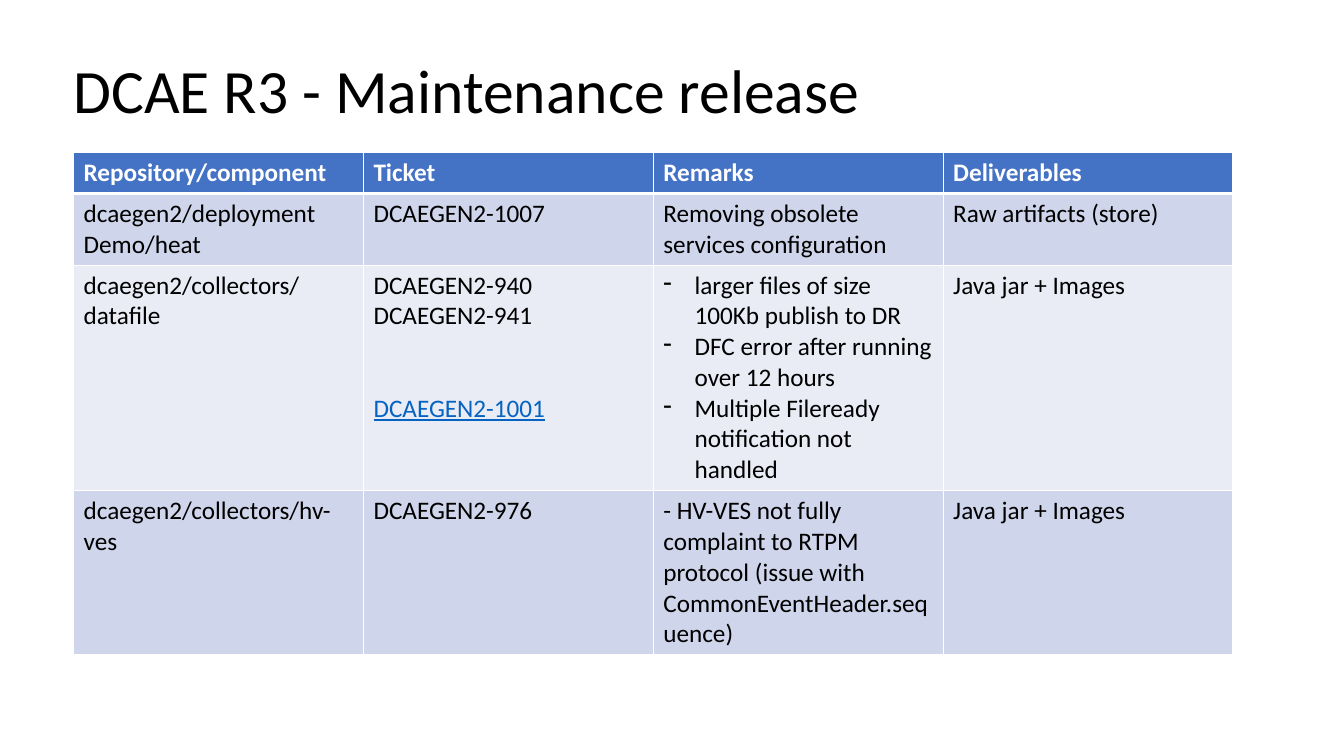
"""Build the maintenance release slide with its table of components."""
from lxml.etree import SubElement
from pptx import Presentation
from pptx.dml.color import RGBColor
from pptx.enum.text import MSO_ANCHOR as Anchor, MSO_AUTO_SIZE as AutoSize, PP_ALIGN as Align
from pptx.oxml import parse_xml
from pptx.oxml.ns import nsdecls, qn
from pptx.util import Inches, Pt

BLACK = RGBColor(0x00, 0x00, 0x00)
WHITE = RGBColor(0xFF, 0xFF, 0xFF)
BLUE = RGBColor(0x44, 0x72, 0xC4)
LINK = RGBColor(0x05, 0x63, 0xC1)
BANDS = [RGBColor(0xCF, 0xD5, 0xEA), RGBColor(0xE9, 0xEB, 0xF5)]

FONT = "Calibri"
HEADERS = ["Repository/component", "Ticket", "Remarks", "Deliverables"]
RELEASES = [
    [["dcaegen2/deployment", "Demo/heat"], ["DCAEGEN2-1007"],
     ["Removing obsolete services configuration"], ["Raw artifacts (store)"]],
    [["dcaegen2/collectors/datafile"],
     ["DCAEGEN2-940", "DCAEGEN2-941",
      ("DCAEGEN2-1001", dict(color=LINK, underline=True, before=44))],
     [("larger files of size 100Kb publish to DR", dict(bullet="-")),
      ("DFC error after running over 12 hours", dict(bullet="-")),
      ("Multiple Fileready notification not handled", dict(bullet="-"))],
     ["Java jar + Images"]],
    [["dcaegen2/collectors/hv-ves"], ["DCAEGEN2-976"],
     ["- HV-VES not fully complaint to RTPM protocol "
      "(issue with CommonEventHeader.sequence)"], ["Java jar + Images"]],
]
ROW_HEIGHTS = [0.41, 0.71, 2.24, 1.62]


def add_text(p, text, size=18, color=BLACK, bold=False, underline=False,
             before=0, spacing=1.0, bullet=None):
    """Write one formatted run into a paragraph."""
    p.alignment = Align.LEFT
    p.space_before = Pt(before)
    p.line_spacing = spacing
    r = p.add_run()
    r.text = text
    font = r.font
    font.name, font.size, font.bold, font.underline = FONT, Pt(size), bold, underline
    font.color.rgb = color
    if bullet:
        ppr = p._p.get_or_add_pPr()
        ppr.set("marL", str(Inches(0.31)))
        ppr.set("indent", str(-Inches(0.31)))
        SubElement(ppr, qn("a:buFontTx"))
        SubElement(ppr, qn("a:buChar"), char=bullet)


def set_borders(cell, top=1, bottom=1):
    """Give a cell white borders, with widths in points."""
    tcpr = cell._tc.get_or_add_tcPr()
    widths = [("L", 1), ("R", 1), ("T", top), ("B", bottom)]
    for i, (side, width) in enumerate(widths):
        tcpr.insert(i, parse_xml(
            f'<a:ln{side} {nsdecls("a")} w="{Pt(width)}"><a:solidFill>'
            f'<a:srgbClr val="{WHITE}"/></a:solidFill></a:ln{side}>'))


def fill_cell(cell, lines, fill, **fmt):
    """Write the lines of a cell, each a string or a string with its format."""
    cell.fill.solid()
    cell.fill.fore_color.rgb = fill
    tf = cell.text_frame
    for i, line in enumerate(lines):
        text, own = (line, {}) if isinstance(line, str) else line
        p = tf.add_paragraph() if i else tf.paragraphs[0]
        add_text(p, text, **{**fmt, **own})


def add_title(slide, text):
    """Place and fill the title placeholder."""
    sp = slide.shapes.title
    sp.left, sp.top, sp.width, sp.height = map(Inches, (0.63, 0.18, 11.69, 1.5))
    tf = sp.text_frame
    tf.auto_size = AutoSize.NONE
    tf.vertical_anchor = Anchor.MIDDLE
    add_text(tf.paragraphs[0], text, size=44, spacing=0.9)


def add_release_table(slide):
    """Add the table with a header row and banded release rows."""
    table = slide.shapes.add_table(
        len(ROW_HEIGHTS), len(HEADERS), Inches(0.73), Inches(1.51),
        Inches(11.5), Inches(sum(ROW_HEIGHTS))).table
    for row, height in zip(table.rows, ROW_HEIGHTS):
        row.height = Inches(height)
    for c, header in enumerate(HEADERS):
        cell = table.cell(0, c)
        fill_cell(cell, [header], BLUE, color=WHITE, bold=True)
        set_borders(cell, bottom=3)
    for r, release in enumerate(RELEASES):
        for c, lines in enumerate(release):
            cell = table.cell(r + 1, c)
            fill_cell(cell, lines, BANDS[r % 2])
            set_borders(cell, top=1 if r else 3)


def main():
    """Build and save the slide."""
    prs = Presentation()
    prs.slide_width, prs.slide_height = Inches(13.33), Inches(7.5)
    slide = prs.slides.add_slide(prs.slide_layouts[5])
    add_title(slide, "DCAE R3 - Maintenance release")
    add_release_table(slide)
    prs.save("out.pptx")


if __name__ == "__main__":
    main()
